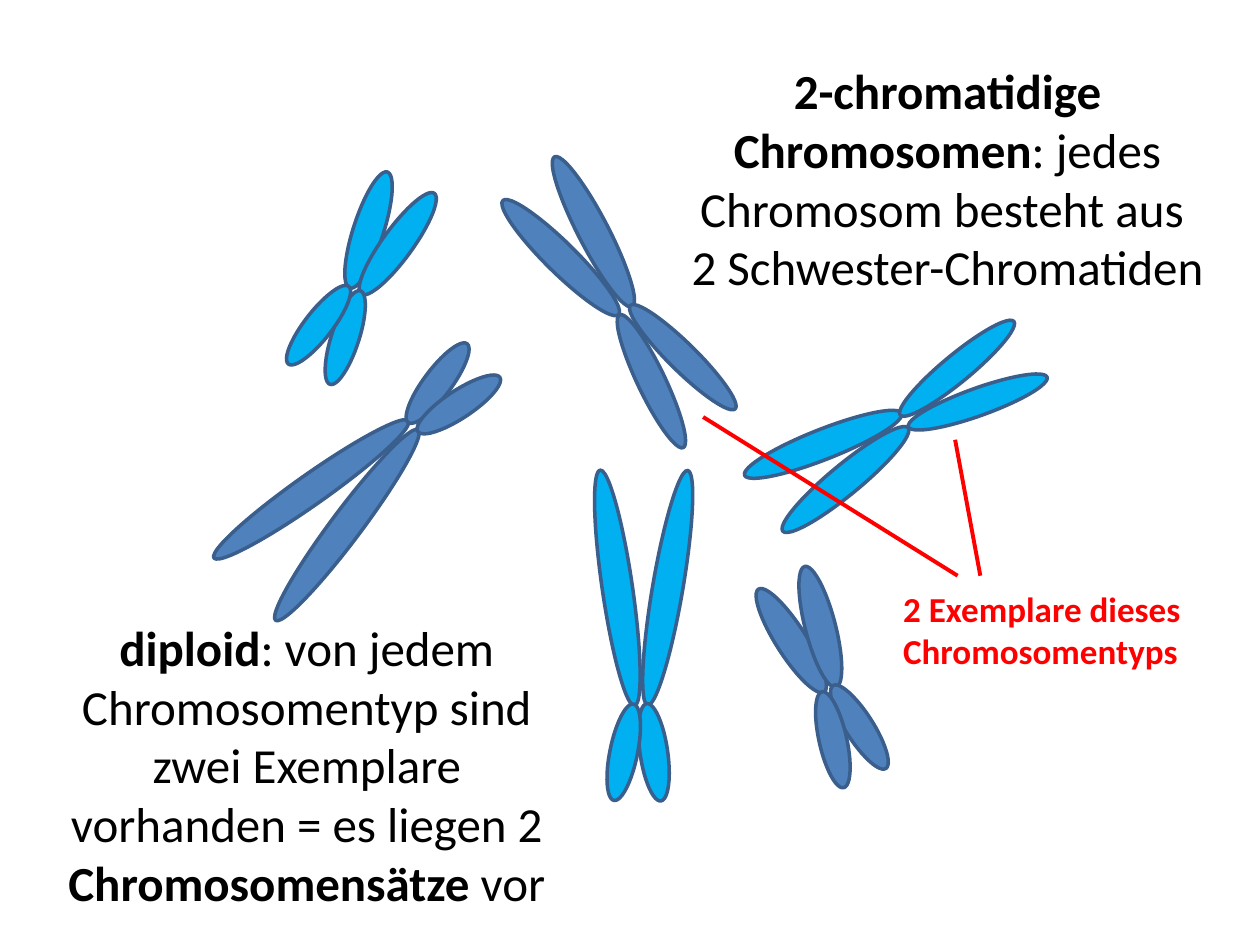
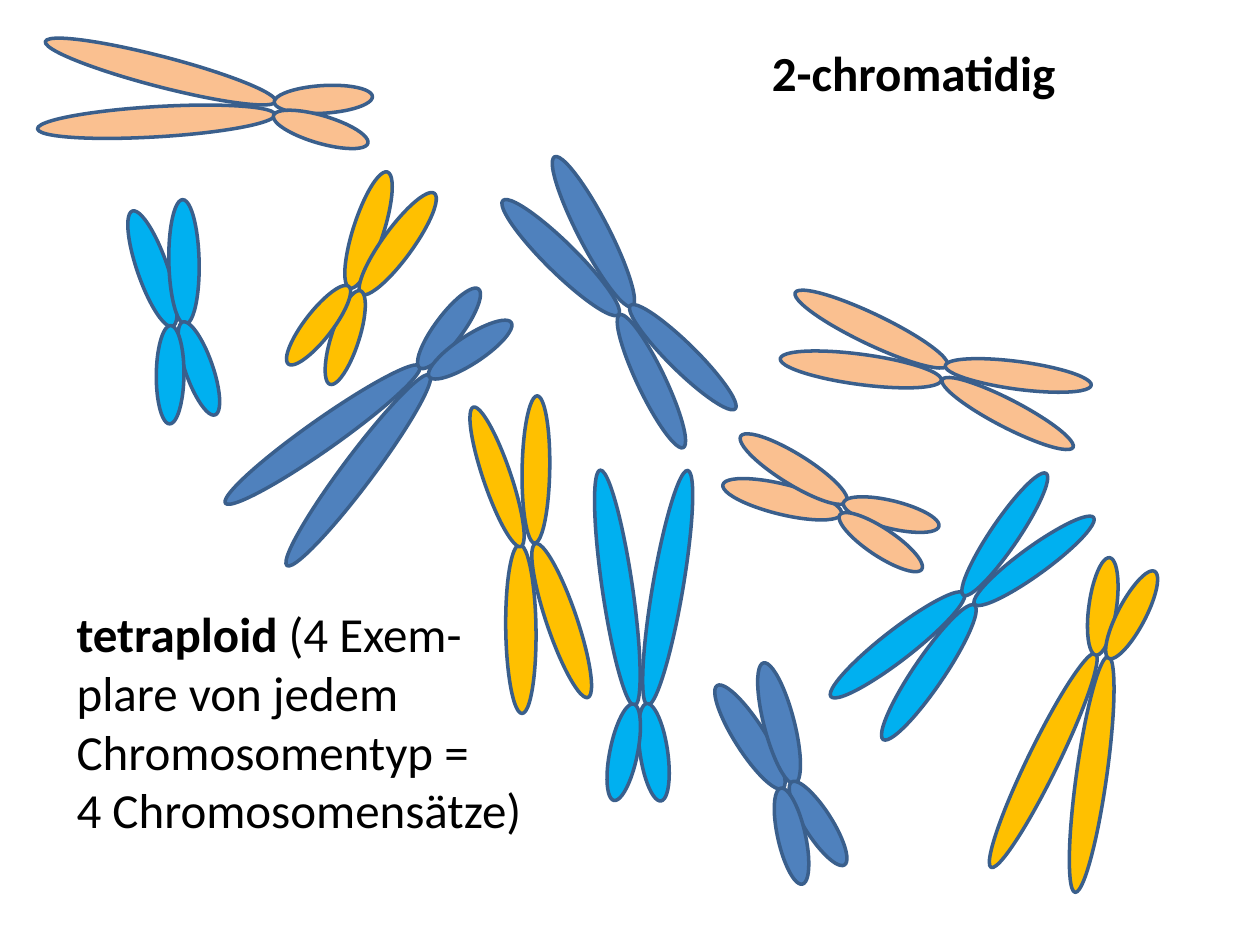
from dataclasses import dataclass
from math import cos, radians, sin

from lxml.etree import SubElement
from pptx import Presentation
from pptx.dml.color import RGBColor
from pptx.enum.shapes import MSO_CONNECTOR, MSO_SHAPE
from pptx.enum.text import MSO_AUTO_SIZE, PP_ALIGN
from pptx.oxml.ns import qn
from pptx.util import Pt


@dataclass(frozen=True)
class Theme:
    font: str = "Calibri"
    body: float = 28
    note: float = 20
    black: str = "000000"
    red: str = "FF0000"
    edge: str = "3A5F8C"
    blue: str = "4F81BD"
    cyan: str = "00B0F0"
    gold: str = "FFC000"
    peach: str = "FAC090"
    rim: float = 2
    rule: float = 2.25


THEME = Theme()

# Arms of an upright chromosome: centre x, centre y, width, length.
# Order: long left, long right, short right, short left.
BIG = [(-13.9, -46.8, 17.3, 136.1), (14.9, -47.2, 17.3, 136.1),
       (8.1, 46.9, 15.8, 56.2), (-9.1, 47.1, 15.8, 56.2)]
MID = [(-11.5, -43.5, 17.3, 92.9), (12.3, -44.3, 17.3, 96.5),
       (10.9, 43.7, 15.8, 84.2), (-11.7, 44.1, 15.8, 84.2)]
SMALL = [(-8.4, -30.4, 17.3, 69.8), (10, -31, 17.3, 71.3),
         (7.6, 30.4, 15.8, 56.2), (-9.2, 31, 15.8, 56.2)]
TILTS = (-9, 9, -9, 10.8)

# Places that both slides use: centre x, centre y, turn in degrees.
LOW = (366.1, 382.9, 0.7)
LEFT = (204.3, 162.4, 27)
TOP = (355.5, 175.4, 323.6)


class Deck:
    def __init__(self, theme):
        self.theme = theme
        self.prs = Presentation()
        self.prs.slide_width, self.prs.slide_height = Pt(720), Pt(540)
        self.slide = None

    def new(self):
        self.slide = self.prs.slides.add_slide(self.prs.slide_layouts[6])

    def pair(self, arms, place, fill):
        """Draw one chromosome of two chromatids, turned about its centre."""
        left, top, turn = place
        c, s = cos(radians(turn)), sin(radians(turn))
        group = self.slide.shapes.add_group_shape()
        for (x, y, wide, long), tilt in zip(arms, TILTS):
            mid_x, mid_y = left + x * c - y * s, top + x * s + y * c
            arm = group.shapes.add_shape(
                MSO_SHAPE.OVAL, Pt(mid_x - wide / 2), Pt(mid_y - long / 2),
                Pt(wide), Pt(long))
            arm.rotation = (turn + tilt) % 360
            arm.shadow.inherit = False
            arm.fill.solid()
            arm.fill.fore_color.rgb = RGBColor.from_string(fill)
            arm.line.color.rgb = RGBColor.from_string(self.theme.edge)
            arm.line.width = Pt(self.theme.rim)

    def text(self, box, paras, align=PP_ALIGN.LEFT, size=None, color=None):
        """Write paragraphs, each a list of (words, bold) runs."""
        frame = self.slide.shapes.add_textbox(*map(Pt, box)).text_frame
        frame.word_wrap = True
        frame.auto_size = MSO_AUTO_SIZE.SHAPE_TO_FIT_TEXT
        for i, runs in enumerate(paras):
            para = frame.add_paragraph() if i else frame.paragraphs[0]
            para.alignment = align
            para.font.name = self.theme.font
            para.font.size = Pt(size or self.theme.body)
            para.font.color.rgb = RGBColor.from_string(color or self.theme.black)
            for words, bold in runs:
                run = para.add_run()
                run.text = words
                run.font.bold = bold

    def line(self, start, end):
        rule = self.slide.shapes.add_connector(
            MSO_CONNECTOR.STRAIGHT, *map(Pt, start + end))
        rule.line.color.rgb = RGBColor.from_string(self.theme.red)
        rule.line.width = Pt(self.theme.rule)
        SubElement(rule._element.spPr, qn("a:effectLst"))


def diploid(deck):
    t = deck.theme
    deck.new()
    for arms, place, fill in (
            (BIG, (222.1, 257.4, 225.8), t.blue),
            (BIG, LOW, t.cyan),
            (SMALL, (472, 390.6, 336.5), t.blue),
            (SMALL, LEFT, t.cyan),
            (MID, TOP, t.blue),
            (MID, (514.8, 242, 239.5), t.cyan)):
        deck.pair(arms, place, fill)
    deck.text((383, 31, 316.8, 143.3), [
        [("2-chromatidige Chromosomen", True),
         (": jedes Chromosom besteht aus ", False)],
        [("2 Schwester-Chromatiden", False)]], PP_ALIGN.CENTER)
    deck.text((25.2, 349.2, 300.2, 177.1), [
        [("diploid", True),
         (": von jedem Chromosomentyp sind zwei Exemplare vorhanden"
          " = es liegen 2 ", False),
         ("Chromosomensätze", True), (" vor", False)]], PP_ALIGN.CENTER)
    deck.line((401.8, 238.3), (547.2, 329))
    deck.line((545.8, 251.3), (560.2, 329))
    deck.text((509, 331.9, 173.5, 55.4),
              [[("2 Exemplare dieses Chromosomentyps", True)]],
              size=t.note, color=t.red)


def tetraploid(deck):
    t = deck.theme
    deck.new()
    for arms, place, fill in (
            (BIG, (228.6, 226.1, 225.8), t.blue),
            (BIG, LOW, t.cyan),
            (SMALL, (448.4, 445.7, 336.5), t.blue),
            (SMALL, LEFT, t.gold),
            (MID, TOP, t.blue),
            (MID, (552.2, 344.6, 223.2), t.cyan),
            (SMALL, (478.3, 289.3, 292.8), t.peach),
            (SMALL, (100.8, 182, 349.8), t.cyan),
            (BIG, (137.3, 60.3, 275.6), t.peach),
            (BIG, (624.2, 393.7, 197), t.gold),
            (MID, (302.2, 313.7, 170.2), t.gold),
            (MID, (536.9, 212.5, 286.6), t.peach)):
        deck.pair(arms, place, fill)
    deck.text((355, 20.9, 334.1, 41), [[("2-chromatidig", True)]],
              PP_ALIGN.CENTER)
    deck.text((36.7, 341.3, 276.5, 143.3), [
        [("tetraploid", True),
         (" (4 Exem-plare von jedem Chromosomentyp =", False)],
        [("4 Chromosomensätze)", False)]])


def main():
    deck = Deck(THEME)
    diploid(deck)
    tetraploid(deck)
    deck.prs.save("out.pptx")


if __name__ == "__main__":
    main()
